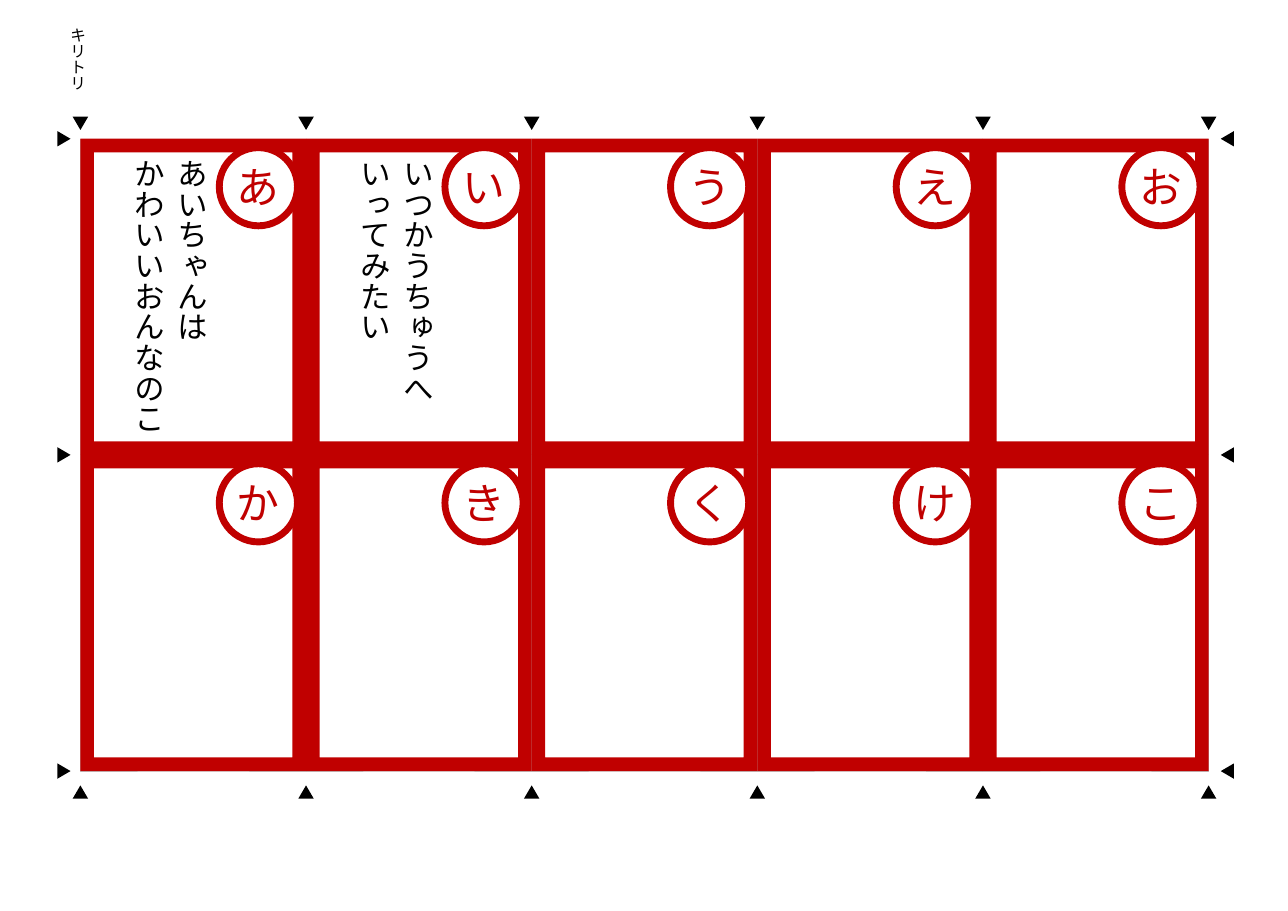
from dataclasses import dataclass
from typing import Optional

from pptx import Presentation
from pptx import util as u
from pptx.dml.color import RGBColor
from pptx.enum import shapes, text

COLORS = {"red": "C00000", "white": "FFFFFF", "black": "000000", "gray": "BFBFBF"}
FONT = "Noto Sans CJK JP"
LEFT, TOP = 0.73, 1.26
COLUMNS, ROWS = 5, 2
CARD_WIDTH, CARD_HEIGHT = (10.97 - LEFT) / COLUMNS, 2.87
MARK_WIDTH, MARK_HEIGHT = 0.14, 0.12
MARK_GAP = 0.14
FRAME_THICKNESS = 0.06
LETTER_SIZE = 0.71


@dataclass
class Card:
    letter: str
    left: float
    top: float
    lines: tuple[str, ...] = ()


@dataclass
class CutMark:
    center_x: float
    center_y: float
    rotation: int


def add_figure(slide, kind, left: float, top: float, width: float, height: float,
               fill: Optional[str] = None, line: Optional[str] = None,
               line_width: float = 0.25):
    shape = slide.shapes.add_shape(kind, *map(u.Inches, (left, top, width, height)))
    shape.shadow.inherit = False
    if fill:
        shape.fill.solid()
        shape.fill.fore_color.rgb = RGBColor.from_string(COLORS[fill])
    else:
        shape.fill.background()
    if line:
        shape.line.color.rgb = RGBColor.from_string(COLORS[line])
        shape.line.width = u.Pt(line_width)
    else:
        shape.line.fill.background()
    return shape


def write(shape, lines: tuple[str, ...], size: float, color: str = "black",
          align=text.PP_ALIGN.LEFT, anchor=text.MSO_ANCHOR.TOP,
          inset: tuple[float, float] = (0, 0), space_before: float = 0,
          vertical: bool = False) -> None:
    frame = shape.text_frame
    frame.word_wrap = True
    frame.vertical_anchor = anchor
    frame.margin_left = frame.margin_right = u.Inches(inset[0])
    frame.margin_top = frame.margin_bottom = u.Inches(inset[1])
    if vertical:
        frame._txBody.bodyPr.set("vert", "eaVert")
    for index, line in enumerate(lines):
        paragraph = frame.add_paragraph() if index else frame.paragraphs[0]
        paragraph.alignment = align
        paragraph.space_before = u.Pt(space_before)
        run = paragraph.add_run()
        run.text = line
        run.font.size = u.Pt(size)
        run.font.name = FONT
        run.font.color.rgb = RGBColor.from_string(COLORS[color])
        east_asian = run.font._element.makeelement(
            "{http://schemas.openxmlformats.org/drawingml/2006/main}ea", {"typeface": FONT})
        run.font._element.append(east_asian)


def add_vertical_text(slide, left: float, top: float, width: float, height: float,
                      lines: tuple[str, ...], **text_format) -> None:
    box = slide.shapes.add_textbox(*map(u.Inches, (left, top, width, height)))
    write(box, lines, vertical=True, **text_format)


def add_cut_mark(slide, mark: CutMark) -> None:
    triangle = add_figure(slide, shapes.MSO_SHAPE.ISOSCELES_TRIANGLE,
                          mark.center_x - MARK_WIDTH / 2, mark.center_y - MARK_HEIGHT / 2,
                          MARK_WIDTH, MARK_HEIGHT, fill="black")
    triangle.rotation = mark.rotation


def add_outline(slide, card: Card) -> None:
    add_figure(slide, shapes.MSO_SHAPE.RECTANGLE, card.left, card.top,
               CARD_WIDTH, CARD_HEIGHT, line="gray")


def add_verse(slide, card: Card) -> None:
    if card.lines:
        add_vertical_text(slide, card.left + 0.12, card.top + 0.12, 1.14, 2.64, card.lines,
                          size=20, inset=(0.08, 0.06), space_before=4)


def add_frame(slide, card: Card) -> None:
    frame = add_figure(slide, shapes.MSO_SHAPE.FRAME, card.left, card.top,
                       CARD_WIDTH, CARD_HEIGHT, fill="red")
    frame.adjustments[0] = FRAME_THICKNESS


def add_letter(slide, card: Card) -> None:
    circle = add_figure(slide, shapes.MSO_SHAPE.OVAL, card.left + 1.26, card.top + 0.08,
                        LETTER_SIZE, LETTER_SIZE, fill="white", line="red", line_width=4.5)
    write(circle, (card.letter,), size=28, color="red",
          align=text.PP_ALIGN.CENTER, anchor=text.MSO_ANCHOR.MIDDLE)


def main() -> None:
    presentation = Presentation()
    presentation.slide_width, presentation.slide_height = u.Inches(11.69), u.Inches(8.27)
    slide = presentation.slides.add_slide(presentation.slide_layouts[6])

    # Cut marks around the sheet
    edges_x = [LEFT + column * CARD_WIDTH for column in range(COLUMNS + 1)]
    edges_y = [TOP + row * CARD_HEIGHT for row in range(ROWS + 1)]
    marks = [CutMark(x, edges_y[0] - MARK_GAP, 180) for x in edges_x]
    marks += [CutMark(x, edges_y[-1] + 0.19, 0) for x in edges_x]
    marks += [CutMark(edges_x[0] - 0.15, y, 90) for y in edges_y]
    marks += [CutMark(edges_x[-1] + 0.17, y, 270) for y in edges_y]
    for mark in marks:
        add_cut_mark(slide, mark)
    add_vertical_text(slide, 0.6, 0.25, 0.21, 0.73, ("キリトリ",), size=10.5,
                      anchor=text.MSO_ANCHOR.MIDDLE)

    # Cards, one layer at a time
    verses = {"あ": ("あいちゃんは", "かわいいおんなのこ"),
              "い": ("いつかうちゅうへ", "いってみたい")}
    cards = [Card(letter, edges_x[index % COLUMNS], edges_y[index // COLUMNS],
                  verses.get(letter, ()))
             for index, letter in enumerate("あいうえおかきくけこ")]
    for add_layer in (add_outline, add_verse, add_frame, add_letter):
        for card in cards:
            add_layer(slide, card)

    presentation.save("out.pptx")


if __name__ == "__main__":
    main()
